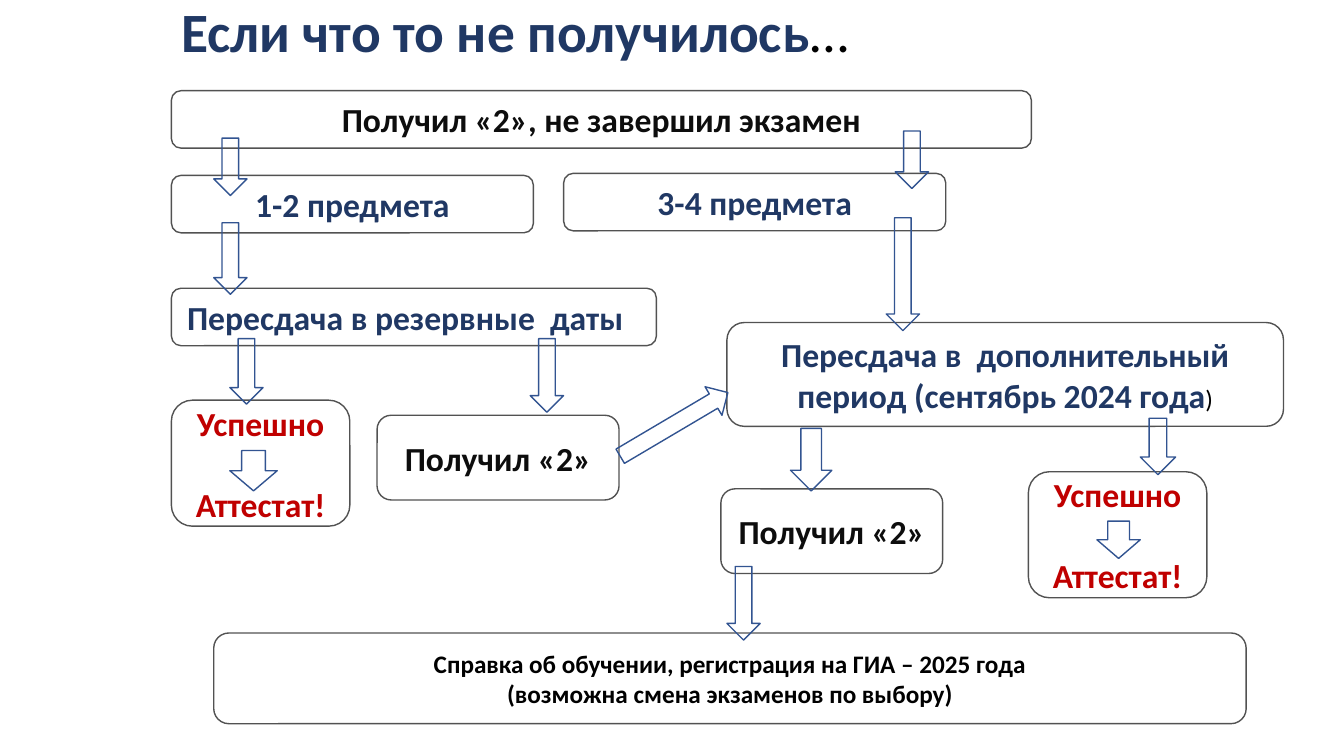
from dataclasses import dataclass
from pptx import Presentation
from pptx.dml.color import RGBColor
from pptx.enum.shapes import MSO_SHAPE as SHAPE
from pptx.enum.text import MSO_ANCHOR as ANCHOR, PP_ALIGN as ALIGN
from pptx.util import Inches, Pt


@dataclass(frozen=True)
class Theme:
    font: str = "Calibri"
    navy: str = "203864"
    ink: str = "0D0D0D"
    black: str = "000000"
    red: str = "C00000"
    white: str = "FFFFFF"
    border: str = "525252"
    arrow: str = "325491"
    title: float = 39.6
    body: int = 24
    small: int = 18
    line: int = 1
    success_gap: int = 29


T = Theme()
WIDTH, HEIGHT = Inches(13.33), Inches(7.5)
COLS, ROWS = 133.3, 75
LEFT, BAR = 17, 5.7
SUCCESS_SIZE = (17.7, 12.5)
ARROW_WIDTH = 3.3
DATES_INSET = 2.7

TITLE = ("Если что то не получилось", "…")
FAILED = ["Получил «2»"]
SUCCESS = ["Успешно", "Аттестат!"]
EXTRA_PERIOD = ["Пересдача в  дополнительный период (сентябрь 2024 года"]
RESERVE_DATES = ["Пересдача в резервные  даты"]
CERTIFICATE = ["Справка об обучении, регистрация на ГИА – 2025 года",
               "(возможна смена экзаменов по выбору)"]

# columns: left, top, width, height, lines, colour, size
BOXES = [
    (LEFT, 9, 85.3, BAR, ["Получил «2», не завершил экзамен"], T.ink, T.body),
    (LEFT, 17.4, 35.9, BAR, ["1-2 предмета"], T.navy, T.body),
    (55.9, 17.2, 37.9, BAR, ["3-4 предмета"], T.navy, T.body),
    (LEFT, 28.6, 48.1, BAR, RESERVE_DATES, T.navy, T.body),
    (LEFT, 39.7, *SUCCESS_SIZE, SUCCESS, T.red, T.body),
    (37.4, 41.2, 24, 8.4, FAILED, T.ink, T.body),
    (72.1, 32, 55.2, 10.3, EXTRA_PERIOD, T.navy, T.body),
    (21.2, 62.8, 102.4, 9, CERTIFICATE, T.black, T.small),
    (71.5, 48.5, 22, 8.4, FAILED, T.ink, T.body),
    (102, 46.8, *SUCCESS_SIZE, SUCCESS, T.red, T.body),
]

ARROWS = [
    (22.85, 13.7, 19.4, ARROW_WIDTH, 0),
    (90.45, 13, 18.7, ARROW_WIDTH, 0),
    (22.85, 22.1, 29.2, ARROW_WIDTH, 0),
    (89.55, 21.6, 32.8, ARROW_WIDTH, 0),
    (24.45, 33.6, 40.1, ARROW_WIDTH, 0),
    (54.25, 33.6, 40.9, ARROW_WIDTH, 0),
    (66.85, 35.9, 48.3, ARROW_WIDTH, 239.4),
    (25.15, 44.7, 48.7, 4.7, 0),
    (80.45, 42.5, 48.7, 4.1, 0),
    (114.85, 41.5, 47.1, 3.5, 0),
    (110.95, 51.7, 55.4, 4.3, 0),
    (73.75, 56.2, 63.5, ARROW_WIDTH, 0),
]


def cols(n):
    return round(WIDTH * n / COLS)


def rows(n):
    return round(HEIGHT * n / ROWS)


def place(left, top, width, height):
    return cols(left), rows(top), cols(width), rows(height)


def style(font, size, color, bold=True):
    font.name, font.size, font.bold = T.font, Pt(size), bold
    font.color.rgb = RGBColor.from_string(color)


def add_run(p, text, size, color, bold=True):
    r = p.add_run()
    r.text = text
    style(r.font, size, color, bold)


def add_outline(slide, kind, area, color):
    sp = slide.shapes.add_shape(kind, *place(*area))
    sp.shadow.inherit = False
    sp.fill.background()
    sp.line.color.rgb = RGBColor.from_string(color)
    sp.line.width = Pt(T.line)
    return sp


def add_title(slide):
    tf = slide.shapes.add_textbox(*place(LEFT, 0.6, 115, BAR)).text_frame
    tf.word_wrap, tf.vertical_anchor = True, ANCHOR.MIDDLE
    p = tf.paragraphs[0]
    p.line_spacing = 0.9
    add_run(p, TITLE[0], T.title, T.navy)
    add_run(p, TITLE[1], T.title, T.black, False)


def add_box(slide, left, top, width, height, lines, color, size):
    sp = add_outline(slide, SHAPE.ROUNDED_RECTANGLE, (left, top, width, height), T.border)
    sp.fill.solid()
    sp.fill.fore_color.rgb = RGBColor.from_string(T.white)
    tf = sp.text_frame
    tf.word_wrap, tf.vertical_anchor = True, ANCHOR.MIDDLE
    if lines is RESERVE_DATES:
        tf.margin_right = cols(DATES_INSET)
    for i, line in enumerate(lines):
        p = tf.add_paragraph() if i else tf.paragraphs[0]
        p.alignment = ALIGN.CENTER
        if i and lines is SUCCESS:
            p.space_before = Pt(T.success_gap)
        if lines is EXTRA_PERIOD:
            add_run(p, line, size, color)
            add_run(p, ")", T.small, T.black, False)
        else:
            p.text = line
            style(p.font, size, color)


def add_arrow(slide, center, top, bottom, width, angle):
    area = (center - width / 2, top, width, bottom - top)
    sp = add_outline(slide, SHAPE.DOWN_ARROW, area, T.arrow)
    sp.rotation = angle


def main():
    prs = Presentation()
    prs.slide_width, prs.slide_height = WIDTH, HEIGHT
    slide = prs.slides.add_slide(prs.slide_layouts[6])
    add_title(slide)
    for box in BOXES:
        add_box(slide, *box)
    for arrow in ARROWS:
        add_arrow(slide, *arrow)
    prs.save("out.pptx")


if __name__ == "__main__":
    main()
